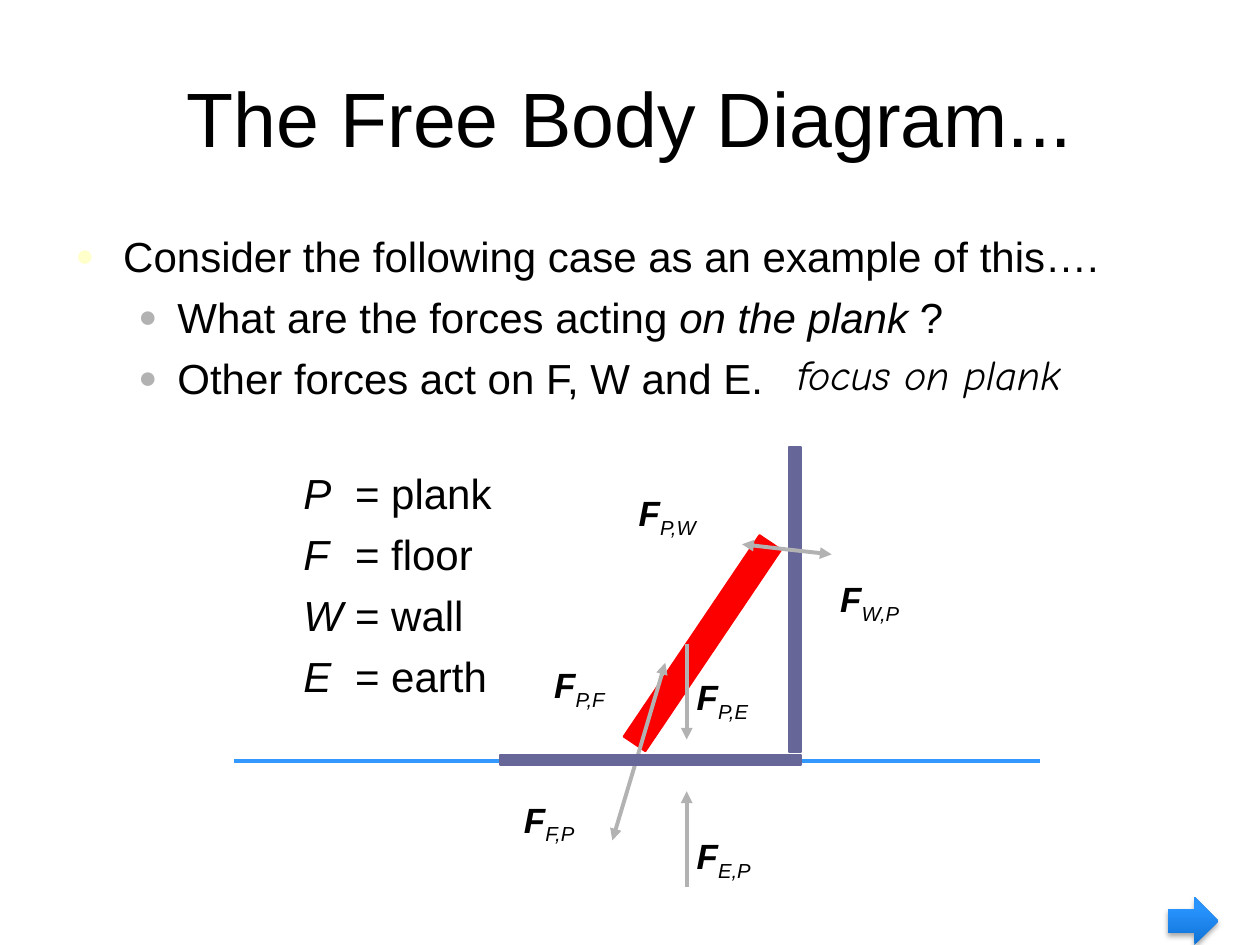
"""Build the free body diagram slide of a plank leaning on a wall."""
import dataclasses

import pptx
import pptx.dml.color
import pptx.enum.shapes
import pptx.enum.text
import pptx.oxml
import pptx.oxml.ns
import pptx.util

Inches = pptx.util.Inches
Pt = pptx.util.Pt
Shape = pptx.enum.shapes.MSO_SHAPE


@dataclasses.dataclass(frozen=True)
class Theme:
    """Hold the colours, fonts and sizes of the slide."""
    ink: str = "000000"
    bullet: str = "FFFFCC"
    force: str = "B2B2B2"
    plank: str = "FC0000"
    structure: str = "666699"
    ground: str = "3399FF"
    button: tuple = ("0F72D5", "2994FF")
    font: str = "Arial"
    note_font: str = "Comic Neue"
    title_size: int = 44
    body_size: int = 24
    label_size: int = 20


THEME = Theme()
BODY_TOP = 1.75
ROW = 0.47


def rgb(value):
    """Return a colour from its hexadecimal value."""
    return pptx.dml.color.RGBColor.from_string(value)


def apply_format(target, values):
    """Set each attribute of the target from a dict of values."""
    for name, value in values.items():
        setattr(target, name, value)


def add_xml(parent, xml):
    """Append a DrawingML element to the parent and return it."""
    namespace = pptx.oxml.ns.nsdecls("a")
    tag, rest = xml.split(" ", 1) if " " in xml else (xml, "/>")
    element = pptx.oxml.parse_xml(f"<a:{tag} {namespace} {rest}")
    parent.append(element)
    return element


def add_run(paragraph, text, size, font=THEME.font, **style):
    """Add a run of text in the given style."""
    run = paragraph.add_run()
    run.text = text
    apply_format(run.font, {"name": font, "size": Pt(size), **style})
    run.font.color.rgb = rgb(THEME.ink)
    return run


def add_text_frame(slide, left, top, width, height, wrap=True, margin_top=0.08):
    """Add a text box and return its frame."""
    box = slide.shapes.add_textbox(*map(Inches, (left, top, width, height)))
    apply_format(box.text_frame, {"word_wrap": wrap, "margin_top": Inches(margin_top)})
    return box.text_frame


def next_paragraph(frame, index):
    """Return the paragraph of this index, spaced from the one before."""
    paragraph = frame.add_paragraph() if index else frame.paragraphs[0]
    paragraph.space_before = Pt(6 if index else 0)
    return paragraph


def add_bullets(slide, items):
    """Add the bulleted statements, each a level and its styled runs."""
    frame = add_text_frame(slide, 0.5, BODY_TOP, 9, 1.5)
    levels = [(0.38, 0.38, THEME.bullet), (0.81, 0.31, THEME.force)]
    for index, (level, runs) in enumerate(items):
        paragraph = next_paragraph(frame, index)
        paragraph.level = level
        margin, hanging, colour = levels[level]
        properties = paragraph._p.get_or_add_pPr()
        properties.set("marL", str(Inches(margin)))
        properties.set("indent", str(-Inches(hanging)))
        add_xml(properties, f'buClr ><a:srgbClr val="{colour}"/></a:buClr>')
        add_xml(properties, 'buSzPct val="75000"/>')
        add_xml(properties, f'buFont typeface="{THEME.font}"/>')
        add_xml(properties, 'buChar char="●"/>')
        for text, italic in runs:
            add_run(paragraph, text, THEME.body_size, italic=italic)


def add_legend(slide, entries):
    """Add the list of symbols with their meanings on a tab stop."""
    frame = add_text_frame(slide, 2.31, BODY_TOP + 4 * ROW, 2, 2)
    for index, (symbol, meaning) in enumerate(entries):
        paragraph = next_paragraph(frame, index)
        stop = f'<a:tab pos="{Inches(0.41)}" algn="l"/>'
        add_xml(paragraph._p.get_or_add_pPr(), f"tabLst >{stop}</a:tabLst>")
        add_run(paragraph, symbol, THEME.body_size, italic=True)
        add_run(paragraph, f"\t= {meaning}", THEME.body_size)


def add_force_label(slide, left, top, subscript):
    """Add a bold F with its subscript."""
    frame = add_text_frame(slide, left, top, 0.75, 0.4, wrap=False, margin_top=0.1)
    paragraph = frame.paragraphs[0]
    paragraph.line_spacing = 0.9
    add_run(paragraph, "F", THEME.label_size, bold=True, italic=True)
    pair = add_run(paragraph, subscript, THEME.label_size, bold=False, italic=True)
    pair._r.get_or_add_rPr().set("baseline", "-25000")


def add_line(slide, start, end, colour, width, arrow=False):
    """Add a straight line, with an arrowhead at its end if wanted."""
    line = slide.shapes.add_connector(
        pptx.enum.shapes.MSO_CONNECTOR.STRAIGHT, *map(Inches, (*start, *end)))
    line.line.color.rgb = rgb(colour)
    line.line.width = Pt(width)
    if arrow:
        add_xml(line.line._get_or_add_ln(), 'tailEnd type="triangle"/>')
    add_xml(line._element.spPr, "effectLst")


def add_force(slide, start, end):
    """Add a force arrow."""
    add_line(slide, start, end, THEME.force, 2.25, arrow=True)


def add_beam(slide, left, top, width, height, colour, rotation=0):
    """Add a solid rectangular beam."""
    beam = slide.shapes.add_shape(
        Shape.RECTANGLE, *map(Inches, (left, top, width, height)))
    beam.shadow.inherit = False
    beam.fill.solid()
    beam.fill.fore_color.rgb = beam.line.color.rgb = rgb(colour)
    beam.line.width = Pt(1)
    beam.rotation = rotation


def add_next_button(slide):
    """Add the shaded arrow in the bottom corner."""
    button = slide.shapes.add_shape(
        Shape.RIGHT_ARROW, *map(Inches, (9.27, 7.12, 0.4, 0.38)))
    button.line.fill.background()
    button.fill.gradient()
    button.fill.gradient_angle = 90
    for stop, colour, position in zip(button.fill.gradient_stops, THEME.button, (0, 0.8)):
        apply_format(stop, {"position": position})
        stop.color.rgb = rgb(colour)
    button.shadow.inherit = False
    effects = button._element.spPr.find(pptx.oxml.ns.qn("a:effectLst"))
    shade = '<a:srgbClr val="000000"><a:alpha val="35000"/></a:srgbClr>'
    add_xml(effects, f'outerShdw blurRad="{Pt(3.1)}" dist="{Pt(1.8)}" dir="5400000" '
                     f'rotWithShape="0">{shade}</a:outerShdw>')


def add_title(slide, text):
    """Place and fill the title."""
    title = slide.shapes.title
    apply_format(title, {"left": Inches(0.5), "top": Inches(0.3),
                         "width": Inches(9), "height": Inches(1.25)})
    title.text_frame.vertical_anchor = pptx.enum.text.MSO_ANCHOR.MIDDLE
    paragraph = title.text_frame.paragraphs[0]
    paragraph.alignment = pptx.enum.text.PP_ALIGN.CENTER
    add_run(paragraph, text, THEME.title_size)


def add_diagram(slide):
    """Draw the plank, wall and floor with the forces between them."""
    foot, contact = (5.07, 5.97), (6.24, 4.36)
    add_line(slide, (1.86, 6.04), (8.25, 6.04), THEME.ground, 2)
    add_force(slide, foot, (4.86, 6.67))
    add_force(slide, (5.45, 7.04), (5.45, 6.28))
    add_beam(slide, 5.47, 4.14, 0.21, 1.93, THEME.plank, rotation=34)
    add_beam(slide, 6.26, 3.55, 0.1, 2.42, THEME.structure)
    add_beam(slide, 3.97, 5.99, 2.39, 0.08, THEME.structure)
    add_force(slide, (5.45, 5.11), (5.45, 5.87))
    add_force(slide, foot, (5.28, 5.26))
    add_force(slide, contact, (5.89, 4.32))
    add_force(slide, contact, (6.6, 4.4))
    for label in ((6.57, 4.49, "W,P"), (4.97, 3.81, "P,W"), (4.3, 5.17, "P,F"),
                  (5.43, 5.27, "P,E"), (4.06, 6.24, "F,P"), (5.43, 6.53, "E,P")):
        add_force_label(slide, *label)


def main():
    """Build and save the slide."""
    deck = pptx.Presentation()
    apply_format(deck, {"slide_width": Inches(10), "slide_height": Inches(7.5)})
    slide = deck.slides.add_slide(deck.slide_layouts.get_by_name("Title Only"))
    add_title(slide, "The Free Body Diagram...")
    add_bullets(slide, [
        (0, [("Consider the following case as an example of this….", False)]),
        (1, [("What are the forces acting ", False), ("on the plank ", True), ("?", False)]),
        (1, [("Other forces act on F, W and E.", False)])])
    focus = add_text_frame(slide, 6.23, BODY_TOP + 2 * ROW, 2.6, 0.5)
    add_run(focus.paragraphs[0], "focus on plank", THEME.body_size, THEME.note_font, italic=True)
    add_legend(slide, [("P", "plank"), ("F", "floor"), ("W", "wall"), ("E", "earth")])
    add_diagram(slide)
    add_next_button(slide)
    deck.save("out.pptx")


if __name__ == "__main__":
    main()
